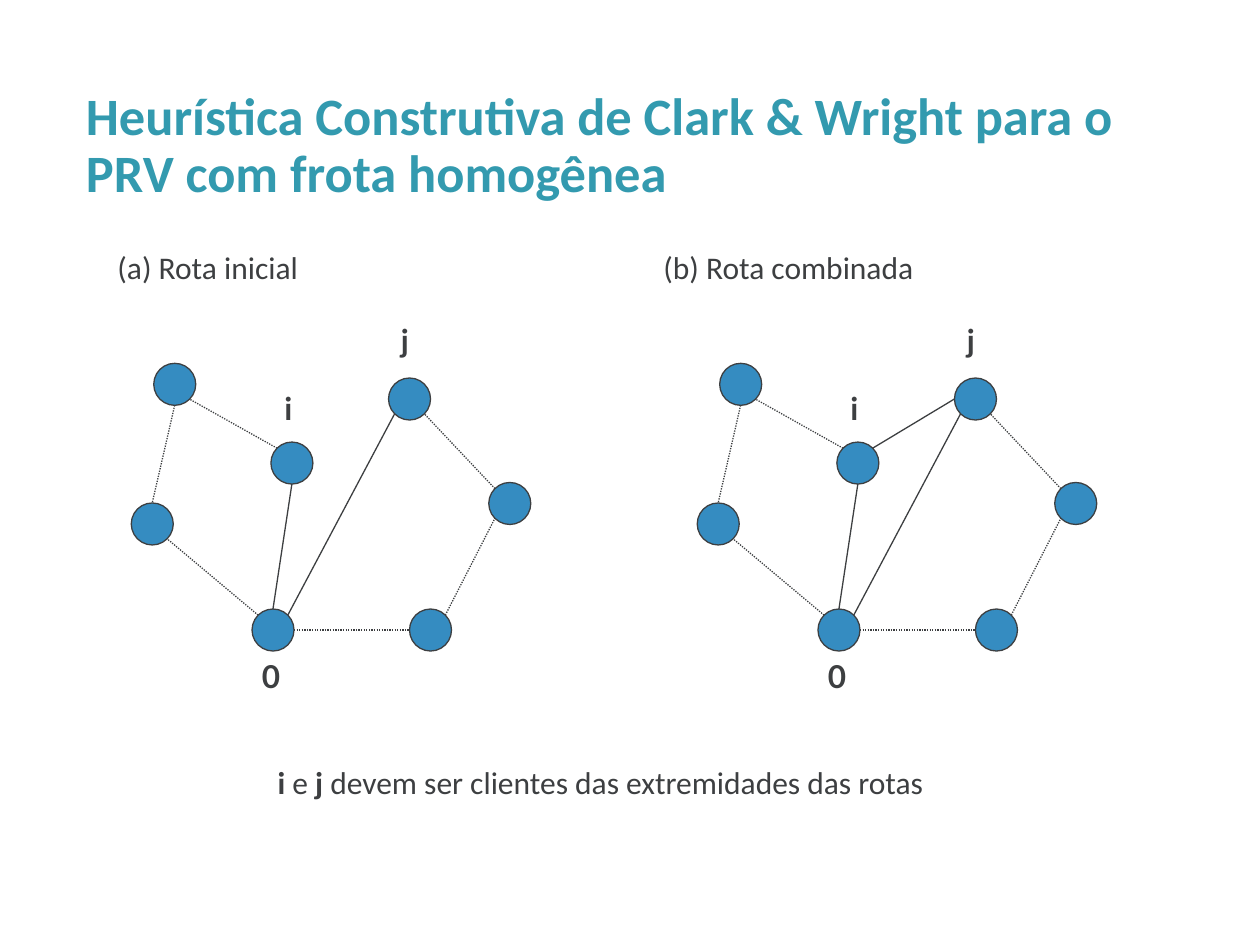
"""Build the slide on the Clark & Wright route heuristic."""
from math import cos, sin, radians
from pptx import Presentation
from pptx.dml.color import RGBColor
from pptx.enum.dml import MSO_LINE
from pptx.enum.shapes import MSO_CONNECTOR, MSO_SHAPE
from pptx.enum.text import MSO_ANCHOR, PP_ALIGN
from pptx.oxml.ns import qn
from pptx.util import Inches, Pt
from lxml.etree import SubElement

deck = Presentation()
deck.slide_width, deck.slide_height = Inches(10), Inches(7.5)
col, row = deck.slide_width / 120, deck.slide_height / 90
slide = deck.slides.add_slide(deck.slide_layouts[6])
shapes = slide.shapes
rgb = RGBColor.from_string
ink, teal, blue = "3D3F41", "339AAF", "358CC1"


def write(left, top, wide, high, runs, font="Calibri", size=18, hue=ink, **form):
    """Add a text box of (words, bold) runs with the given paragraph form."""
    box = shapes.add_textbox(int(left * col), int(top * row), int(wide * col), int(high * row))
    frame = box.text_frame
    frame.word_wrap = True
    frame.vertical_anchor = form.pop("anchor", MSO_ANCHOR.TOP)
    para = frame.paragraphs[0]
    for key, value in form.items():
        setattr(para, key, value)
    for words, bold in runs:
        run = para.add_run()
        run.text = words
        run.font.color.rgb = rgb(hue)
        for key, value in {"name": font, "size": Pt(size), "bold": bold}.items():
            setattr(run.font, key, value)


def site(node, step):
    """Return the point on a node's rim, in eighths of a turn left from the top."""
    x, y = node
    angle = radians(90 + 45 * step)
    return (int((x + dot / 2 + dot / 2 * cos(angle)) * col),
            int((y + dot / 2 - dot / 2 * sin(angle)) * row))


dot = 4
nodes = {
    "depot": (24, 58), "west": (12.5, 47.9), "north": (14.64, 34.6), "i": (25.8, 42.1),
    "j": (37, 36), "east": (46.55, 45.95), "south": (39, 58),
}
edges = [
    ("depot", 1, "west", 5, True), ("north", 4, "west", 0, True),
    ("i", 1, "north", 5, True), ("depot", 0, "i", 4, False),
    ("depot", 6, "south", 2, True), ("south", 7, "east", 3, True),
    ("east", 1, "j", 5, True), ("j", 3, "depot", 7, False),
]
merge = [("i", 7, "j", 2, False)]
marks = {"0": (23.76, 62), "i": (25.9, 36.5), "j": (37, 30)}

write(7, 4.8, 102.4, 15.2,
      [("Heurística Construtiva de Clark & Wright para o PRV com frota homogênea", True)],
      size=30, hue=teal, line_spacing=0.9, anchor=MSO_ANCHOR.BOTTOM)

for head, start, shift, links in [
    ("(a) Rota inicial", 10, 0, edges),
    ("(b) Rota combinada", 62, 53.9, edges + merge),
]:
    write(start, 23, 40, 4.8, [(head, False)])
    spots = {name: (x + shift, y) for name, (x, y) in nodes.items()}
    for x, y in spots.values():
        disc = shapes.add_shape(MSO_SHAPE.OVAL, int(x * col), int(y * row),
                                int(dot * col), int(dot * row))
        disc.shadow.inherit = False
        disc.fill.solid()
        disc.fill.fore_color.rgb = rgb(blue)
        disc.line.color.rgb = rgb(ink)
        disc.line.width = Pt(0.75)
    for tail, out, goal, into, dotted in links:
        link = shapes.add_connector(MSO_CONNECTOR.STRAIGHT, *site(spots[tail], out),
                                    *site(spots[goal], into))
        link.line.color.rgb = rgb(ink)
        link.line.width = Pt(0.75)
        if dotted:
            link.line.dash_style = MSO_LINE.ROUND_DOT
        SubElement(link._element.spPr, qn("a:effectLst"))
    for mark, (x, y) in marks.items():
        write(x + shift, y, 6, 6, [(mark, True)], font="Lato")

write(9.5, 72.1, 95.4, 4.8,
      [("i", True), (" e ", False), ("j", True),
       (" devem ser clientes das extremidades das rotas", False)],
      alignment=PP_ALIGN.CENTER)

deck.save("out.pptx")
